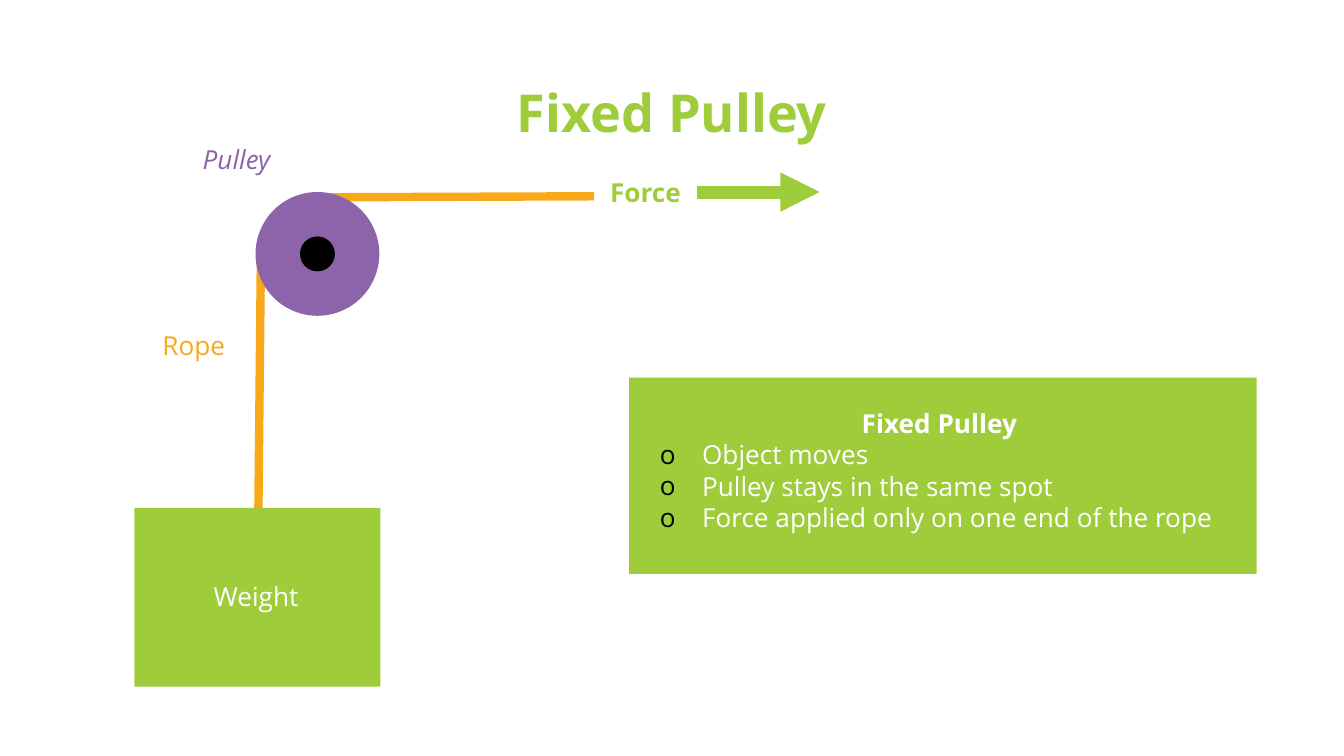
from dataclasses import dataclass

from lxml.etree import SubElement
from pptx import Presentation
from pptx.dml.color import RGBColor
from pptx.enum.shapes import MSO_CONNECTOR, MSO_SHAPE
from pptx.enum.text import PP_ALIGN
from pptx.oxml.ns import qn
from pptx.util import Cm, Pt


@dataclass(frozen=True)
class Theme:
    green: str = "9FCC3B"
    orange: str = "F8A81B"
    purple: str = "8D64AA"
    black: str = "000000"
    white: str = "FFFFFF"
    font: str = "Open Sans"
    title_size: float = 28
    body_size: float = 14
    rope_width: float = 4.5
    arrow_width: float = 7


THEME = Theme()


@dataclass(frozen=True)
class Block:
    left: float
    top: float
    width: float
    height: float
    color: str
    kind: MSO_SHAPE = MSO_SHAPE.RECTANGLE


@dataclass(frozen=True)
class Strand:
    start: tuple[float, float]
    end: tuple[float, float]
    color: str = THEME.orange
    width: float = THEME.rope_width
    arrow: bool = False


@dataclass(frozen=True)
class Line:
    text: str
    color: str
    size: float = THEME.body_size
    bold: bool = False
    italic: bool = False
    centered: bool = False
    bullet: bool = False


@dataclass(frozen=True)
class Label:
    left: float
    top: float
    lines: tuple[Line, ...]
    width: float = 4.24
    height: float = 0.86
    inset: float = 0.13


def disc(center: tuple[float, float], diameter: float, color: str) -> Block:
    x, y = center
    return Block(x - diameter / 2, y - diameter / 2, diameter, diameter, color, MSO_SHAPE.OVAL)


def draw_block(slide, block: Block) -> None:
    body = slide.shapes.add_shape(
        block.kind, Cm(block.left), Cm(block.top), Cm(block.width), Cm(block.height)
    )
    body.shadow.inherit = False
    body.fill.solid()
    body.fill.fore_color.rgb = RGBColor.from_string(block.color)
    body.line.fill.background()


def draw_strand(slide, strand: Strand) -> None:
    ends = [Cm(value) for value in (*strand.start, *strand.end)]
    cord = slide.shapes.add_connector(MSO_CONNECTOR.STRAIGHT, *ends)
    cord.line.color.rgb = RGBColor.from_string(strand.color)
    cord.line.width = Pt(strand.width)
    if strand.arrow:
        SubElement(cord.line._get_or_add_ln(), qn("a:tailEnd"), type="triangle")
    SubElement(cord._element.spPr, qn("a:effectLst"))


def add_bullet(paragraph) -> None:
    properties = paragraph._p.get_or_add_pPr()
    properties.set("marL", str(Cm(0.8)))
    properties.set("indent", str(Cm(-0.8)))
    bullet_color = SubElement(properties, qn("a:buClr"))
    SubElement(bullet_color, qn("a:srgbClr"), val=THEME.black)
    SubElement(properties, qn("a:buFont"), typeface=THEME.font)
    SubElement(properties, qn("a:buChar"), char="o")


def draw_label(slide, label: Label) -> None:
    frame = slide.shapes.add_textbox(
        Cm(label.left), Cm(label.top), Cm(label.width), Cm(label.height)
    ).text_frame
    frame.word_wrap = True
    frame.margin_top = frame.margin_bottom = Cm(label.inset)
    for index, line in enumerate(label.lines):
        paragraph = frame.add_paragraph() if index else frame.paragraphs[0]
        paragraph.text = line.text
        paragraph.alignment = PP_ALIGN.CENTER if line.centered else PP_ALIGN.LEFT
        paragraph.font.name = THEME.font
        paragraph.font.size = Pt(line.size)
        paragraph.font.bold = line.bold
        paragraph.font.italic = line.italic
        paragraph.font.color.rgb = RGBColor.from_string(line.color)
        if line.bullet:
            add_bullet(paragraph)


FACTS = (
    "Object moves",
    "Pulley stays in the same spot",
    "Force applied only on one end of the rope",
)
AXLE = (6, 4.8)

ROPES = (
    Strand((5.89, 3.73), (11.23, 3.71)),
    Strand((4.88, 9.98), (4.93, 4.88)),
)
FORCE_ARROW = Strand((13.18, 3.63), (15.49, 3.63), THEME.green, THEME.arrow_width, True)
FACT_PANEL = Block(11.89, 7.14, 11.86, 3.71, THEME.green)
WEIGHT = Block(2.54, 9.6, 4.65, 3.38, THEME.green)
WHEEL = disc(AXLE, 2.34, THEME.purple)
HUB = disc(AXLE, 0.66, THEME.black)

TITLE = Label(
    0.86, 1.27,
    (Line("Fixed Pulley", THEME.green, THEME.title_size, bold=True, centered=True),),
    23.67, 1.6, 0.25,
)
LABELS = (
    Label(2.82, 6.1, (Line("Rope", THEME.orange),)),
    Label(11.28, 3.2, (Line("Force", THEME.green, bold=True),)),
    Label(2.72, 10.85, (Line("Weight", THEME.white, centered=True),)),
    Label(3.58, 2.59, (Line("Pulley", THEME.purple, italic=True),)),
    Label(
        12.22, 7.57,
        (
            Line("Fixed Pulley", THEME.white, bold=True, centered=True),
            *(Line(fact, THEME.white, bullet=True) for fact in FACTS),
        ),
        11.07, 2.64,
    ),
)


def main() -> None:
    deck = Presentation()
    deck.slide_width, deck.slide_height = Cm(25.4), Cm(14.29)
    slide = deck.slides.add_slide(deck.slide_layouts[6])
    draw_label(slide, TITLE)
    draw_block(slide, FACT_PANEL)
    for rope in ROPES:
        draw_strand(slide, rope)
    for wheel_part in (WHEEL, HUB):
        draw_block(slide, wheel_part)
    draw_strand(slide, FORCE_ARROW)
    draw_block(slide, WEIGHT)
    for label in LABELS:
        draw_label(slide, label)
    deck.save("out.pptx")


if __name__ == "__main__":
    main()
